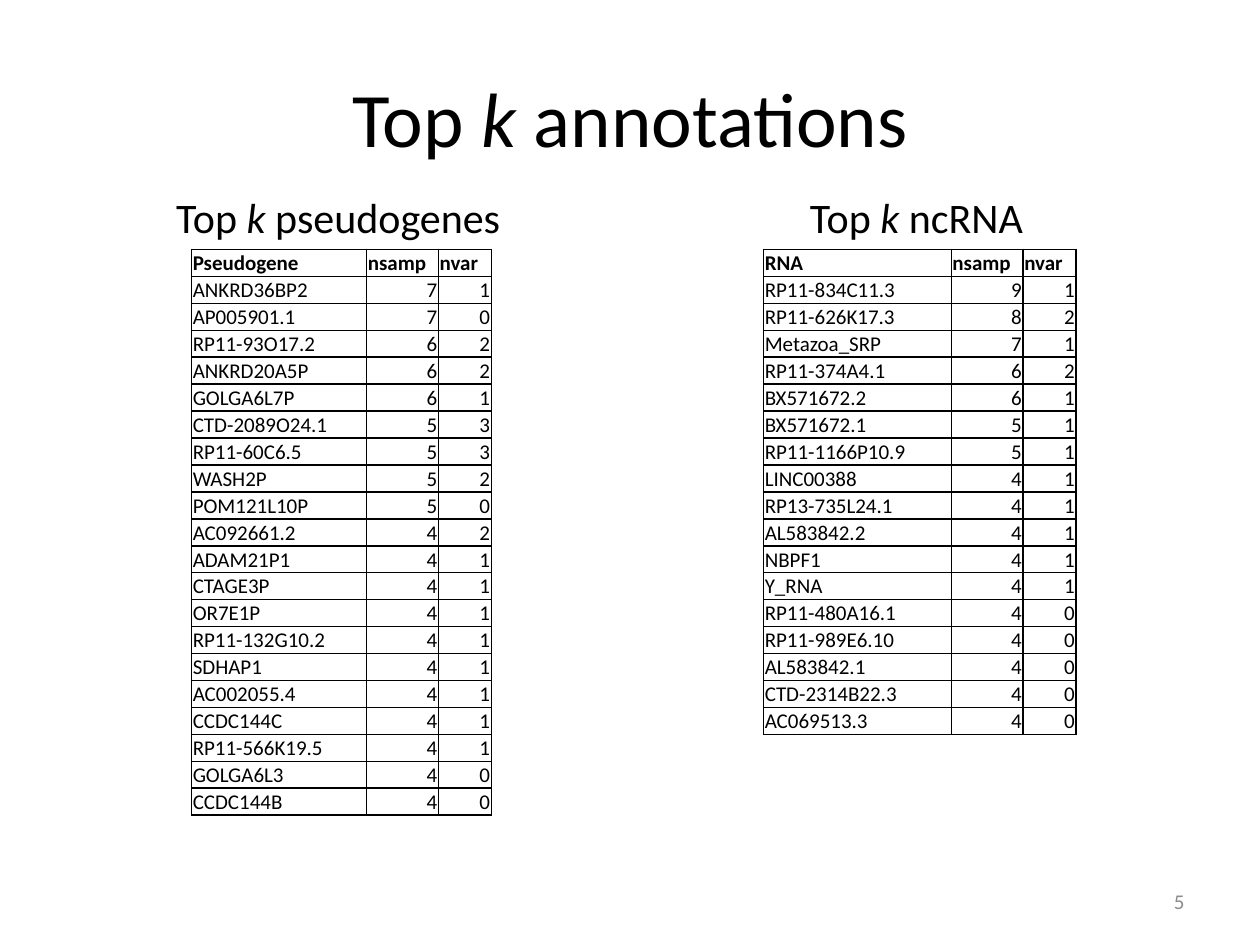
import pptx
import pptx.util
import pptx.dml.color
import pptx.enum.text
import pptx.oxml
import pptx.oxml.ns

Inches = pptx.util.Inches
Pt = pptx.util.Pt
ALIGN = pptx.enum.text.PP_ALIGN
ANCHOR = pptx.enum.text.MSO_ANCHOR

BLACK = pptx.dml.color.RGBColor(0x00, 0x00, 0x00)
GREY = pptx.dml.color.RGBColor(0x8C, 0x8C, 0x8C)
FONT = "Calibri"
ROW = Inches(3.85) // 18

GENES = [
    ("ANKRD36BP2", 7, 1), ("AP005901.1", 7, 0), ("RP11-93O17.2", 6, 2),
    ("ANKRD20A5P", 6, 2), ("GOLGA6L7P", 6, 1), ("CTD-2089O24.1", 5, 3),
    ("RP11-60C6.5", 5, 3), ("WASH2P", 5, 2), ("POM121L10P", 5, 0),
    ("AC092661.2", 4, 2), ("ADAM21P1", 4, 1), ("CTAGE3P", 4, 1),
    ("OR7E1P", 4, 1), ("RP11-132G10.2", 4, 1), ("SDHAP1", 4, 1),
    ("AC002055.4", 4, 1), ("CCDC144C", 4, 1), ("RP11-566K19.5", 4, 1),
    ("GOLGA6L3", 4, 0), ("CCDC144B", 4, 0),
]
RNAS = [
    ("RP11-834C11.3", 9, 1), ("RP11-626K17.3", 8, 2), ("Metazoa_SRP", 7, 1),
    ("RP11-374A4.1", 6, 2), ("BX571672.2", 6, 1), ("BX571672.1", 5, 1),
    ("RP11-1166P10.9", 5, 1), ("LINC00388", 4, 1), ("RP13-735L24.1", 4, 1),
    ("AL583842.2", 4, 1), ("NBPF1", 4, 1), ("Y_RNA", 4, 1),
    ("RP11-480A16.1", 4, 0), ("RP11-989E6.10", 4, 0), ("AL583842.1", 4, 0),
    ("CTD-2314B22.3", 4, 0), ("AC069513.3", 4, 0),
]


def add_run(para, text, size, color=BLACK, bold=False, italic=False):
    run = para.add_run()
    run.text = text
    font = run.font
    font.name, font.size, font.bold, font.italic = FONT, Pt(size), bold, italic
    font.color.rgb = color


def add_topic(para, topic, size):
    """Write 'Top k topic' with the k in italics."""
    add_run(para, "Top ", size)
    add_run(para, "k ", size, italic=True)
    add_run(para, topic, size)


def add_title(slide, left, top, width, height):
    title = slide.shapes.title
    title.left, title.top, title.width, title.height = left, top, width, height
    frame = title.text_frame
    frame.vertical_anchor = ANCHOR.MIDDLE
    para = frame.paragraphs[0]
    para.alignment = ALIGN.CENTER
    add_topic(para, "annotations", 44)


def add_label(slide, topic, left, top, width, height):
    frame = slide.shapes.add_textbox(left, top, width, height).text_frame
    frame.word_wrap = False
    frame.auto_size = pptx.enum.text.MSO_AUTO_SIZE.SHAPE_TO_FIT_TEXT
    add_topic(frame.paragraphs[0], topic, 24)


def add_border(cell):
    """Draw a one-point black line on all four sides."""
    props = cell._tc.get_or_add_tcPr()
    for i, side in enumerate(("lnL", "lnR", "lnT", "lnB")):
        props.insert(i, pptx.oxml.parse_xml(
            f'<a:{side} {pptx.oxml.ns.nsdecls("a")} w="{Pt(1)}">'
            f'<a:solidFill><a:srgbClr val="{BLACK}"/></a:solidFill></a:{side}>'))


def fill_cell(cell, value, head):
    cell.margin_left = cell.margin_right = cell.margin_top = Inches(0.01)
    cell.margin_bottom = 0
    cell.vertical_anchor = ANCHOR.BOTTOM
    cell.fill.background()
    add_border(cell)
    para = cell.text_frame.paragraphs[0]
    para.alignment = ALIGN.RIGHT if isinstance(value, int) else ALIGN.LEFT
    add_run(para, str(value), 12, bold=head)


def add_counts(slide, name, data, left, top, first):
    """Add a table of counts whose first column has the given width."""
    rows = [(name, "nsamp", "nvar")] + data
    widths = (first, Inches(0.57), Inches(0.42))
    table = slide.shapes.add_table(
        len(rows), len(widths), left, top, sum(widths), ROW * len(rows)).table
    table.first_row = table.horz_banding = False
    for col, width in zip(table.columns, widths):
        col.width = width
    for r, row in enumerate(rows):
        table.rows[r].height = ROW
        for c, value in enumerate(row):
            fill_cell(table.cell(r, c), value, r == 0)


def add_number(slide, text, left, top, width, height):
    frame = slide.shapes.add_textbox(left, top, width, height).text_frame
    frame.word_wrap = True
    frame.vertical_anchor = ANCHOR.MIDDLE
    para = frame.paragraphs[0]
    para.alignment = ALIGN.RIGHT
    add_run(para, text, 12, GREY)


def main():
    deck = pptx.Presentation()
    deck.slide_width, deck.slide_height = Inches(10), Inches(7.5)
    slide = deck.slides.add_slide(deck.slide_layouts[5])
    add_title(slide, Inches(0.5), Inches(0.3), Inches(9), Inches(1.25))
    add_counts(slide, "Pseudogene", GENES, Inches(1.52), Inches(1.98), Inches(1.39))
    add_counts(slide, "RNA", RNAS, Inches(6.06), Inches(1.98), Inches(1.49))
    add_number(slide, "5", Inches(7.17), Inches(6.95), Inches(2.33), Inches(0.4))
    add_label(slide, "pseudogenes", Inches(1.3), Inches(1.47), Inches(2.83), Inches(0.5))
    add_label(slide, "ncRNA", Inches(6.33), Inches(1.47), Inches(1.94), Inches(0.5))
    deck.save("out.pptx")


if __name__ == "__main__":
    main()
